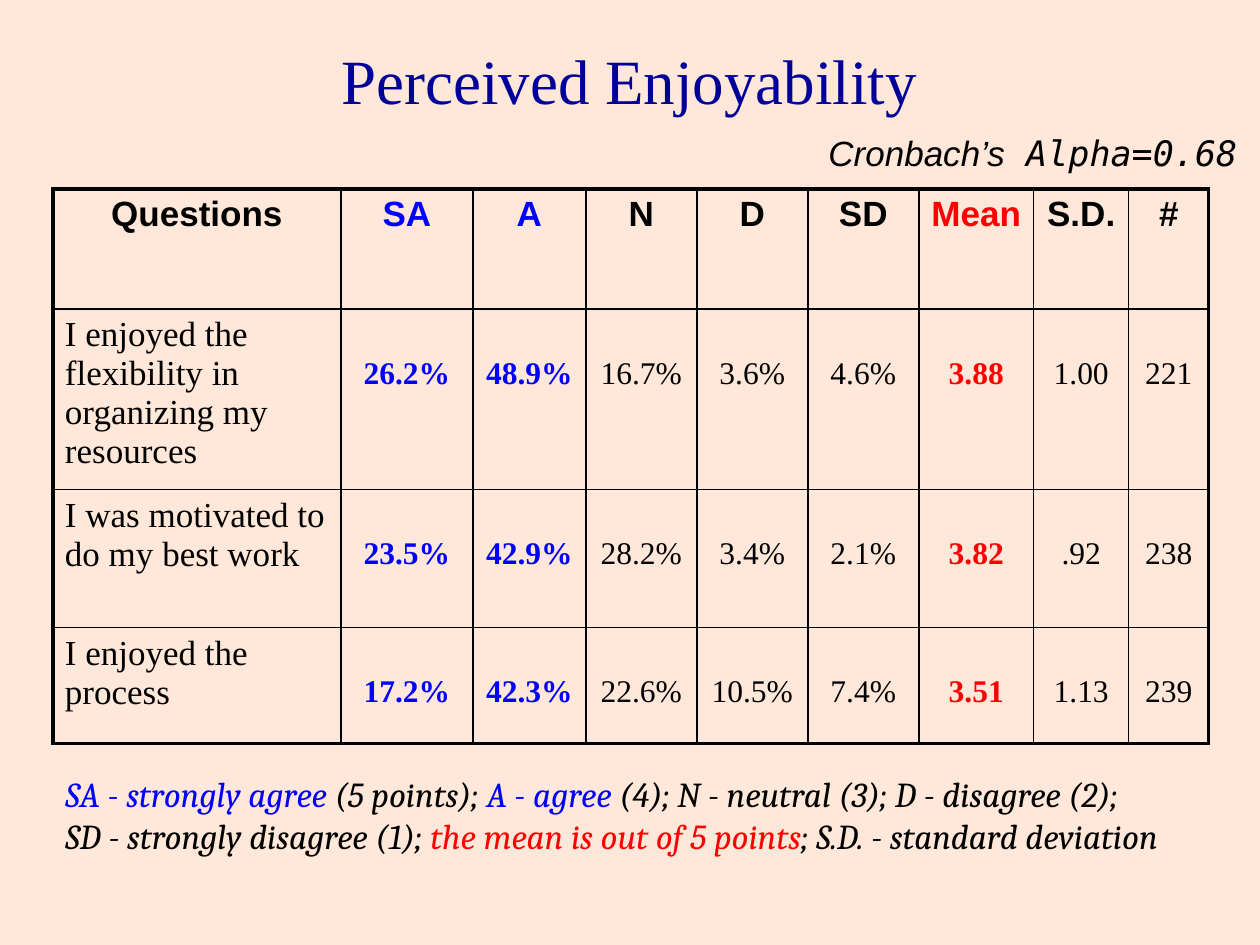
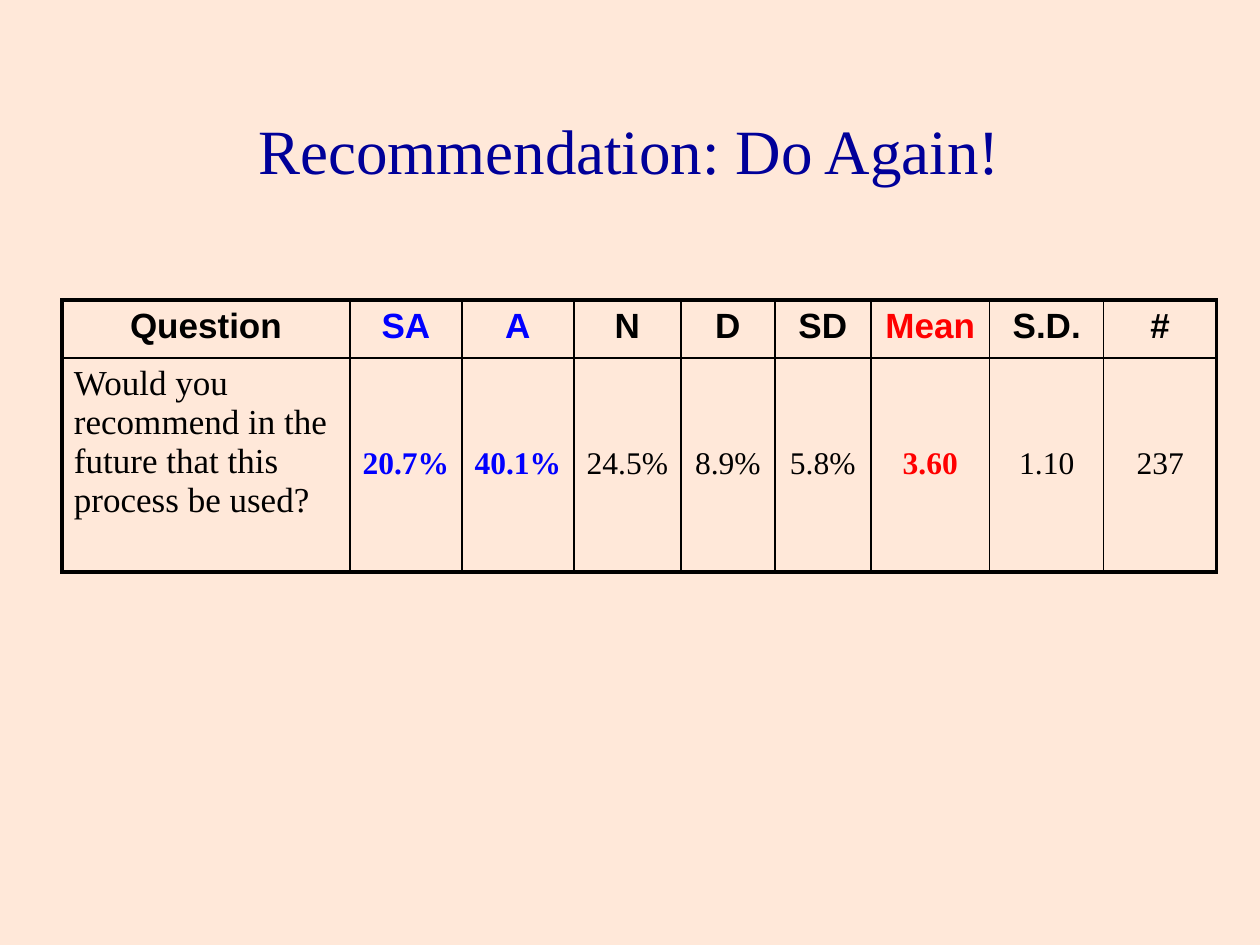
from lxml import etree
from pptx import Presentation
from pptx.dml.color import RGBColor as RGB
from pptx.enum.text import MSO_ANCHOR as Anchor, PP_ALIGN as Align
from pptx.oxml.ns import qn
from pptx.util import Emu, Pt

PX_PER_INCH = 126
COLORS = {
    "page": "FFE8D9",
    "title": "000099",
    "ink": "000000",
    "agree": "0000FF",
    "mean": "FF0000",
}
SERIF, SANS, MONO, LEGEND = "Times New Roman", "Arial", "DejaVu Sans Mono", "Cambria"
ANSWERS = ["SA", "A", "N", "D", "SD", "Mean", "S.D.", "#"]
HIGHLIGHTS = {"SA": "agree", "A": "agree", "Mean": "mean"}
THIN, THICK = 1, 2.25


def px(n):
    return Emu(round(n * 914400 / PX_PER_INCH))


def rgb(name):
    return RGB.from_string(COLORS[name])


def write(tf, runs, align=Align.LEFT, **style):
    """Fill one paragraph; runs is a string or (text, format overrides) pairs."""
    p = tf.paragraphs[0]
    p.alignment = align
    for text, changes in [(runs, {})] if isinstance(runs, str) else runs:
        if text == "\n":
            p.add_line_break()
            continue
        look = {"font": SERIF, "size": 20, "color": "ink", "bold": False,
                "italic": False, **style, **changes}
        r = p.add_run()
        r.text = text
        r.font.name = look["font"]
        r.font.size = Pt(look["size"])
        r.font.bold = look["bold"]
        r.font.italic = look["italic"]
        r.font.color.rgb = rgb(look["color"])


def set_borders(cell, left, right, top, bottom):
    tc_pr = cell._tc.get_or_add_tcPr()
    for side, width in zip("LRTB", (left, right, top, bottom)):
        ln = etree.SubElement(tc_pr, qn(f"a:ln{side}"), w=str(Pt(width)))
        fill = etree.SubElement(ln, qn("a:solidFill"))
        etree.SubElement(fill, qn("a:srgbClr"), val=COLORS["ink"])


class Deck:
    def __init__(self, width, height):
        self.prs = Presentation()
        self.prs.slide_width, self.prs.slide_height = px(width), px(height)
        self.s = None

    def slide(self):
        self.s = self.prs.slides.add_slide(self.prs.slide_layouts[6])
        fill = self.s.background.fill
        fill.solid()
        fill.fore_color.rgb = rgb("page")

    def text(self, box, runs, wrap=True, anchor=Anchor.TOP, **style):
        tf = self.s.shapes.add_textbox(*map(px, box)).text_frame
        tf.word_wrap = wrap
        tf.vertical_anchor = anchor
        write(tf, runs, **style)

    def title(self, top, height, text):
        self.text((94, top, 1071, height), text, anchor=Anchor.MIDDLE,
                  align=Align.CENTER, size=36, color="title")

    def survey(self, left, top, widths, heights, heading, rows, value_top):
        """Draw a results table; value_top is the gap above the figures in a row."""
        n_rows, n_cols = len(heights), len(widths)
        frame = self.s.shapes.add_table(n_rows, n_cols, px(left), px(top),
                                        px(sum(widths)), px(sum(heights)))
        table = frame.table
        table.first_row = table.horz_banding = False
        for col, width in zip(table.columns, widths):
            col.width = px(width)
        for row, height in zip(table.rows, heights):
            row.height = px(height)

        for i, row in enumerate([[heading, *ANSWERS], *rows]):
            for j, text in enumerate(row):
                cell = table.cell(i, j)
                set_borders(cell,
                            THICK if j == 0 else THIN,
                            THICK if j == n_cols - 1 else THIN,
                            THICK if i == 0 else THIN,
                            THICK if i == n_rows - 1 else THIN)
                cell.fill.background()
                cell.margin_left = cell.margin_right = px(12 if j == 0 else 8)
                mark = HIGHLIGHTS.get(ANSWERS[j - 1]) if j else None
                style = {"color": mark or "ink", "align": Align.CENTER}
                if i == 0:
                    style.update(font=SANS, bold=True)
                elif j == 0:
                    style.update(align=Align.LEFT)
                else:
                    style.update(size=18, bold=bool(mark))
                    cell.margin_top = px(value_top)
                write(cell.text_frame, text, **style)


def enjoyability(deck):
    deck.slide()
    deck.title(0, 158, "Perceived Enjoyability")
    deck.survey(
        53, 189, [288, 132, 113, 111, 111, 111, 115, 95, 80], [120, 168, 138, 116],
        "Questions",
        [["I enjoyed the flexibility in organizing my resources",
          "26.2%", "48.9%", "16.7%", "3.6%", "4.6%", "3.88", "1.00", "221"],
         ["I was motivated to do my best work",
          "23.5%", "42.9%", "28.2%", "3.4%", "2.1%", "3.82", ".92", "238"],
         ["I enjoyed the process",
          "17.2%", "42.3%", "22.6%", "10.5%", "7.4%", "3.51", "1.13", "239"]],
        value_top=47)
    agree, mean = {"color": "agree"}, {"color": "mean"}
    deck.text((53, 766, 1176, 97), [
        ("SA - strongly agree", agree), (" (5 points); ", {}),
        ("A - agree", agree), (" (4); N - neutral (3); D - disagree (2);", {}),
        ("\n", {}), ("SD - strongly disagree (1); ", {}),
        ("the mean is out of 5 points", mean), ("; S.D. - standard deviation", {}),
    ], font=LEGEND, italic=True)
    deck.text((816, 125, 441, 55),
              [("Cronbach’s", {"font": SANS}), (" Alpha=0.68", {"font": MONO})],
              wrap=False, italic=True)


def recommendation(deck):
    deck.slide()
    deck.title(84, 130, "Recommendation: Do Again!")
    deck.survey(
        62, 300, [288, 112, 112, 107, 94, 96, 119, 114, 113], [58, 214],
        "Question",
        [["Would you recommend in the future that this process be used?",
          "20.7%", "40.1%", "24.5%", "8.9%", "5.8%", "3.60", "1.10", "237"]],
        value_top=88)


def main():
    deck = Deck(1260, 945)
    enjoyability(deck)
    recommendation(deck)
    deck.prs.save("out.pptx")


if __name__ == "__main__":
    main()
